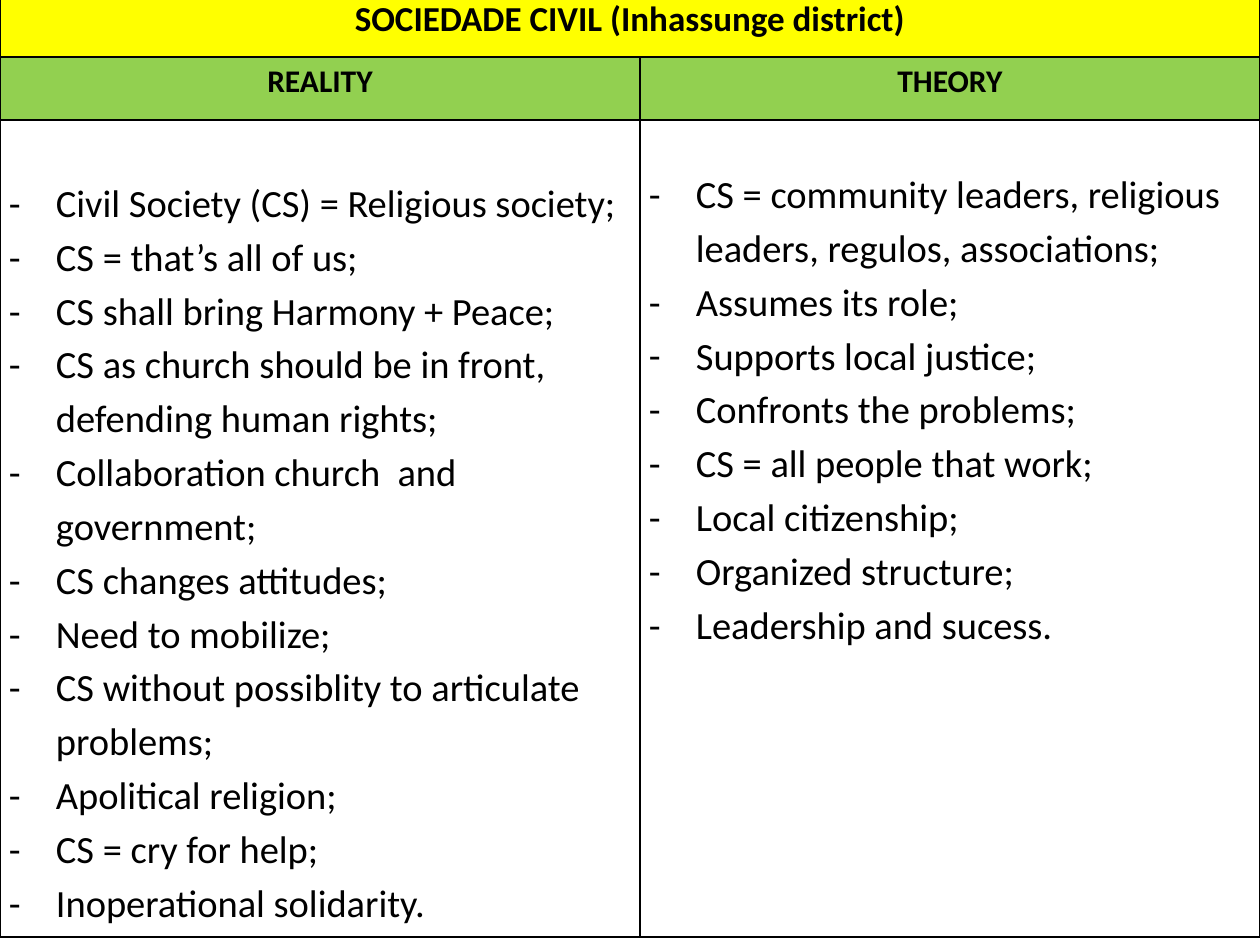
from dataclasses import dataclass

from pptx import Presentation
from pptx import util as u
from pptx.dml.color import RGBColor
from pptx.enum import text
from pptx.oxml import parse_xml
from pptx.oxml.ns import nsdecls

TITLE = "SOCIEDADE CIVIL (Inhassunge district)"
COLUMNS = [
    ("REALITY", 54, [
        "Civil Society (CS) = Religious society;",
        "CS = that’s all of us;",
        "CS shall bring Harmony + Peace;",
        "CS as church should be in front, defending human rights;",
        "Collaboration church  and government;",
        "CS changes attitudes;",
        "Need to mobilize;",
        "CS without possiblity to articulate problems;",
        "Apolitical religion;",
        "CS = cry for help;",
        "Inoperational solidarity.",
    ]),
    ("THEORY", 45, [
        "CS = community leaders, religious leaders, regulos, associations;",
        "Assumes its role;",
        "Supports local justice;",
        "Confronts the problems;",
        "CS = all people that work;",
        "Local citizenship;",
        "Organized structure;",
        "Leadership and sucess.",
    ]),
]
SLIDE_WIDTH, SLIDE_HEIGHT = 1260, 945
COLUMN_WIDTHS = [640, 620]
ROW_HEIGHTS = [65, 63, 817]
TABLE_TOP = -8
CELL_MARGIN = 9
BULLET_INDENT = 47


@dataclass(frozen=True)
class Theme:
    font: str = "Calibri"
    ink: str = "000000"
    title_fill: str = "FFFF00"
    heading_fill: str = "92D050"
    body_fill: str = "FFFFFF"
    title_size: int = 20
    heading_size: int = 18
    body_size: int = 22
    line_spacing: float = 1.15
    border: int = 1


THEME = Theme()


def px(value):
    return u.Emu(round(value * u.Inches(1) / 126))


def add_borders(cell):
    properties = cell._tc.get_or_add_tcPr()
    for index, side in enumerate("LRTB"):
        line = parse_xml(
            f'<a:ln{side} {nsdecls("a")} w="{u.Pt(THEME.border)}"><a:solidFill>'
            f'<a:srgbClr val="{THEME.ink}"/></a:solidFill></a:ln{side}>')
        properties.insert(index, line)


def add_bullet(para):
    properties = para._p.get_or_add_pPr()
    properties.set("marL", str(px(BULLET_INDENT)))
    properties.set("indent", str(-px(BULLET_INDENT)))
    spacing = properties.find("{*}lnSpc")
    for tag in (f'<a:buChar {nsdecls("a")} char="-"/>',
                f'<a:buFont {nsdecls("a")} typeface="{THEME.font}"/>'):
        spacing.addnext(parse_xml(tag))


def fill_cell(cell, lines, size, fill, margin_top=0, heading=True):
    cell.fill.solid()
    cell.fill.fore_color.rgb = RGBColor.from_string(fill)
    cell.margin_left = cell.margin_right = px(CELL_MARGIN)
    cell.margin_top, cell.margin_bottom = px(margin_top), 0
    cell.vertical_anchor = text.MSO_ANCHOR.TOP
    cell.text = "\n".join(lines)
    for para in cell.text_frame.paragraphs:
        para.alignment = text.PP_ALIGN.CENTER if heading else text.PP_ALIGN.LEFT
        para.line_spacing = THEME.line_spacing
        para.font.name = THEME.font
        para.font.size = u.Pt(size)
        para.font.bold = heading
        para.font.color.rgb = RGBColor.from_string(THEME.ink)
        if not heading:
            add_bullet(para)


def main():
    deck = Presentation()
    deck.slide_width, deck.slide_height = px(SLIDE_WIDTH), px(SLIDE_HEIGHT)
    page = deck.slides.add_slide(deck.slide_layouts[6])
    table = page.shapes.add_table(
        len(ROW_HEIGHTS), len(COLUMN_WIDTHS), 0, px(TABLE_TOP),
        px(sum(COLUMN_WIDTHS)), px(sum(ROW_HEIGHTS))).table
    table.first_row = table.horz_banding = False
    for column, width in zip(table.columns, COLUMN_WIDTHS):
        column.width = px(width)
    for row, height in zip(table.rows, ROW_HEIGHTS):
        row.height = px(height)

    table.cell(0, 0).merge(table.cell(0, len(COLUMNS) - 1))
    fill_cell(table.cell(0, 0), [TITLE], THEME.title_size, THEME.title_fill)
    for index, (heading, margin_top, points) in enumerate(COLUMNS):
        fill_cell(table.cell(1, index), [heading],
                  THEME.heading_size, THEME.heading_fill)
        fill_cell(table.cell(2, index), points, THEME.body_size,
                  THEME.body_fill, margin_top, heading=False)
    for cell in table.iter_cells():
        add_borders(cell)
    deck.save("out.pptx")


if __name__ == "__main__":
    main()
